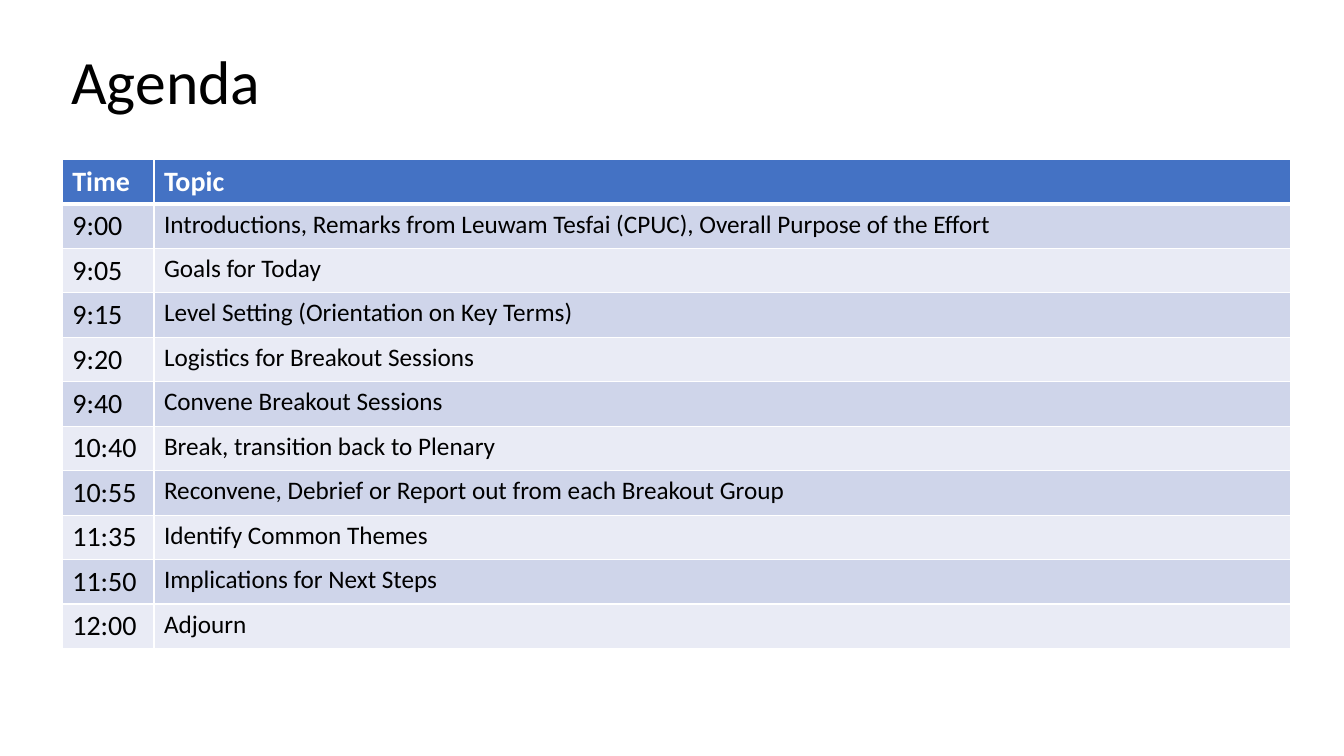
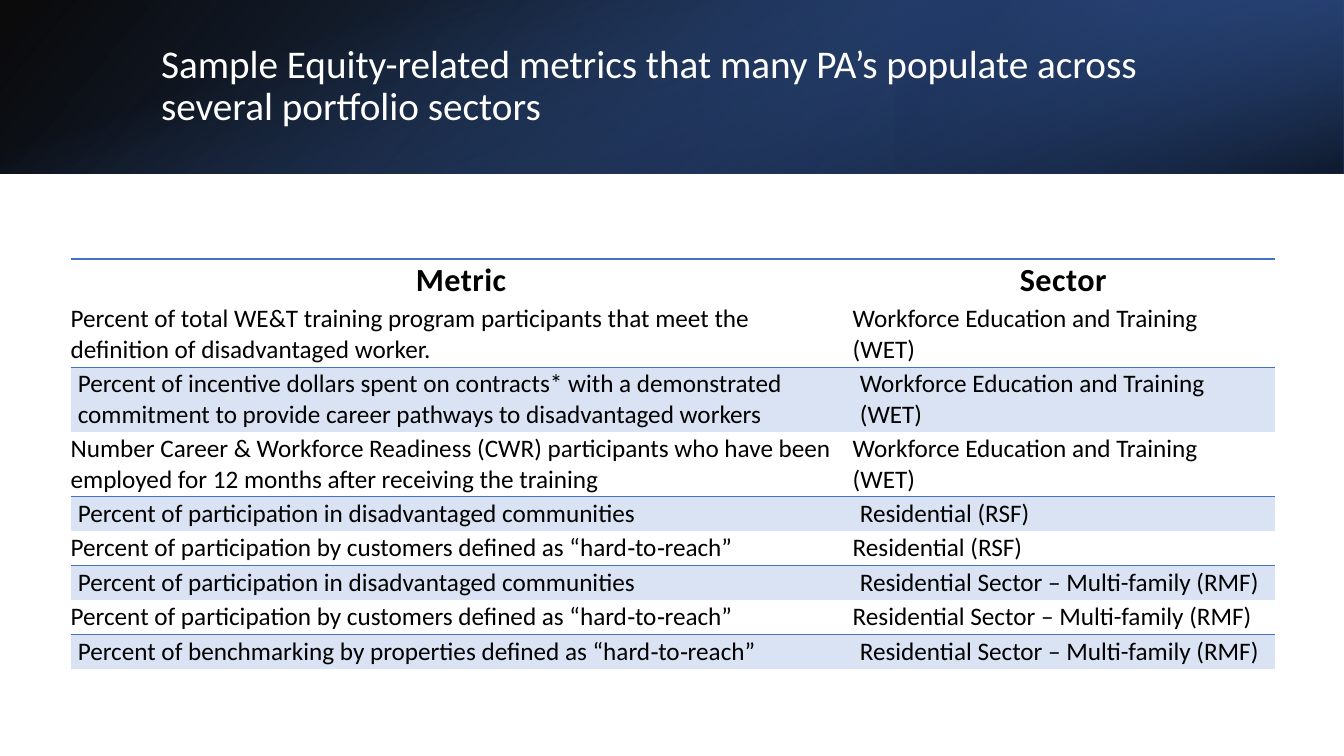
from dataclasses import dataclass

from lxml.etree import SubElement
from pptx import Presentation
from pptx.dml.color import RGBColor
from pptx.enum.shapes import MSO_SHAPE
from pptx.enum.text import MSO_ANCHOR, PP_ALIGN
from pptx.oxml.ns import qn
from pptx.util import Cm, Pt


@dataclass(frozen=True)
class Theme:
    font: str = "Calibri"
    black: str = "000000"
    white: str = "FFFFFF"
    blue: str = "4472C4"
    deep_blue: str = "2F5597"
    navy: str = "203864"
    band_dark: str = "CFD5EA"
    band_light: str = "E9EBF5"
    tint: str = "DAE3F3"
    title: int = 44
    banner_title: int = 28
    metric_header: int = 23
    time: int = 20
    body: int = 18


THEME = Theme()
SLIDE_WIDTH, SLIDE_HEIGHT = 33.87, 19.05
BANNER_HEIGHT = 4.37

AGENDA = [
    ("Time", "Topic"),
    ("9:00", "Introductions, Remarks from Leuwam Tesfai (CPUC), Overall Purpose of the Effort"),
    ("9:05", "Goals for Today"),
    ("9:15", "Level Setting (Orientation on Key Terms)"),
    ("9:20", "Logistics for Breakout Sessions"),
    ("9:40", "Convene Breakout Sessions"),
    ("10:40", "Break, transition back to Plenary"),
    ("10:55", "Reconvene, Debrief or Report out from each Breakout Group"),
    ("11:35", "Identify Common Themes"),
    ("11:50", "Implications for Next Steps"),
    ("12:00", "Adjourn"),
]

WORKFORCE = "Workforce Education and Training (WET)"
RESIDENTIAL = "Residential (RSF)"
MULTI_FAMILY = "Residential Sector – Multi-family (RMF)"
COMMUNITIES = "Percent of participation in disadvantaged communities"
HARD_TO_REACH = "Percent of participation by customers defined as “hard‐to‐reach”"
METRICS = [
    ("Metric", "Sector"),
    ("Percent of total WE&T training program participants that meet the "
     "definition of disadvantaged worker.", WORKFORCE),
    ("Percent of incentive dollars spent on contracts* with a demonstrated "
     "commitment to provide career pathways to disadvantaged workers", WORKFORCE),
    ("Number Career & Workforce Readiness (CWR) participants who have been "
     "employed for 12 months after receiving the training", WORKFORCE),
    (COMMUNITIES, RESIDENTIAL),
    (HARD_TO_REACH, RESIDENTIAL),
    (COMMUNITIES, MULTI_FAMILY),
    (HARD_TO_REACH, MULTI_FAMILY),
    ("Percent of benchmarking by properties defined as “hard‐to‐reach”", MULTI_FAMILY),
]


def set_values(target, values):
    for name, value in values.items():
        setattr(target, name, value)


def write_text(text_frame, text, size, color, bold=False, **paragraph_format):
    """Put one formatted run in the frame and return it."""
    paragraph = text_frame.paragraphs[0]
    set_values(paragraph, paragraph_format)
    run = paragraph.add_run()
    run.text = text
    set_values(run.font, {"name": THEME.font, "size": Pt(size), "bold": bold})
    run.font.color.rgb = RGBColor.from_string(color)
    return run


def add_title(slide, box, text, size, color):
    shape = slide.shapes.add_textbox(*map(Cm, box))
    set_values(shape.text_frame, {"word_wrap": True, "vertical_anchor": MSO_ANCHOR.MIDDLE})
    write_text(shape.text_frame, text, size, color, line_spacing=0.9)


def set_borders(cell, borders):
    """Draw the sides named in borders as (colour, points); clear the others."""
    properties = cell._tc.get_or_add_tcPr()
    for side in "LRTB":
        line = SubElement(properties, qn(f"a:ln{side}"))
        if side in borders:
            color, width = borders[side]
            line.set("w", str(Pt(width)))
            fill = SubElement(line, qn("a:solidFill"))
            SubElement(fill, qn("a:srgbClr")).set("val", color)
        else:
            line.set("w", "0")
            SubElement(line, qn("a:noFill"))


def fill_cell(cell, color):
    if color is None:
        cell.fill.background()
    else:
        cell.fill.solid()
        cell.fill.fore_color.rgb = RGBColor.from_string(color)


def add_grid(slide, left, top, widths, heights, rows, format_cell):
    """Add a table and let format_cell(cell, row, column, text) write each cell."""
    box = (left, top, sum(widths), sum(heights))
    table = slide.shapes.add_table(len(rows), len(widths), *map(Cm, box)).table
    set_values(table, {"first_row": False, "horz_banding": False})
    for column, width in zip(table.columns, widths):
        column.width = Cm(width)
    for table_row, height in zip(table.rows, heights):
        table_row.height = Cm(height)
    for row, texts in enumerate(rows):
        for column, text in enumerate(texts):
            format_cell(table.cell(row, column), row, column, text)


def format_agenda_cell(cell, row, column, text):
    header = row == 0
    borders = dict.fromkeys("LRTB", (THEME.white, 1))
    if row < 2:
        borders["B" if header else "T"] = (THEME.white, 3)
    set_borders(cell, borders)
    band = THEME.band_dark if row % 2 else THEME.band_light
    fill_cell(cell, THEME.blue if header else band)
    size = THEME.time if header or column == 0 else THEME.body
    write_text(cell.text_frame, text, size, THEME.white if header else THEME.black, header)


def format_metric_cell(cell, row, column, text):
    header = row == 0
    tinted = not header and row % 2 == 0
    borders = {}
    if header:
        borders["T"] = (THEME.blue, 1.5)
    else:
        borders["T" if tinted else "B"] = (THEME.blue, 0.75)
    set_borders(cell, borders)
    fill_cell(cell, THEME.tint if tinted else None)
    set_values(cell, {
        "margin_left": Cm(0.18 if tinted else 0),
        "margin_right": Cm(0.03 if header else 0.28),
        "margin_top": 0,
        "margin_bottom": 0,
        "vertical_anchor": MSO_ANCHOR.MIDDLE,
    })
    run = write_text(cell.text_frame, text,
                     THEME.metric_header if header else THEME.body, THEME.black, header,
                     alignment=PP_ALIGN.CENTER if header else PP_ALIGN.LEFT)
    if header:
        run.font._element.set("spc", "30")


def add_gradient(slide, box, stops, angle, rotation=0, flip=False):
    """Add a rectangle; stops are (position, colour, opacity %), angle is clockwise."""
    shape = slide.shapes.add_shape(MSO_SHAPE.RECTANGLE, *map(Cm, box))
    shape.shadow.inherit = False
    shape.line.fill.background()
    shape.rotation = rotation
    if flip:
        shape._element.spPr.find(qn("a:xfrm")).set("flipH", "1")
    shape.fill.gradient()
    shape.fill.gradient_angle = 360 - angle
    for stop, (position, color, _) in zip(shape.fill.gradient_stops, stops):
        stop.position = position
        stop.color.rgb = RGBColor.from_string(color)
    colors = shape._element.spPr.find(qn("a:gradFill")).iter(qn("a:srgbClr"))
    for element, (_, _, opacity) in zip(list(colors), stops):
        SubElement(element, qn("a:alpha")).set("val", str(opacity * 1000))


def add_banner(slide, left, top, width, height):
    """Layer three gradients: base, glow on the right third, dark lower edge."""
    third = width / 3
    offset = (width - height) / 2
    add_gradient(slide, (left, top, width, height),
                 [(0, THEME.black, 96), (1, THEME.deep_blue, 100)], 140, flip=True)
    add_gradient(slide, (left + width - third, top, third, height),
                 [(0.19, THEME.navy, 68), (1, THEME.blue, 79)], 320, 180, True)
    add_gradient(slide, (left + offset, top - offset, height, width),
                 [(0.23, THEME.blue, 0), (0.99, THEME.black, 74)], 340, 90)


def build_agenda(slide):
    add_title(slide, (1.55, 0.69, 29.21, 2.87), "Agenda", THEME.title, THEME.black)
    add_grid(slide, 1.57, 4.02, [2.31, 28.65], [1.12] * len(AGENDA), AGENDA,
             format_agenda_cell)


def build_metrics(slide):
    add_banner(slide, 0, 0, SLIDE_WIDTH, BANNER_HEIGHT)
    add_title(slide, (3.81, 0.97, 27.89, 2.44),
              "Sample Equity-related metrics that many PA’s populate across "
              "several portfolio sectors", THEME.banner_title, THEME.white)
    heights = [1.09] + [1.63] * 3 + [0.87] * 5
    add_grid(slide, 1.78, 6.53, [19.71, 10.64], heights, METRICS, format_metric_cell)


def main():
    presentation = Presentation()
    set_values(presentation, {"slide_width": Cm(SLIDE_WIDTH), "slide_height": Cm(SLIDE_HEIGHT)})
    blank = presentation.slide_layouts[6]
    for build in (build_agenda, build_metrics):
        build(presentation.slides.add_slide(blank))
    presentation.save("out.pptx")


if __name__ == "__main__":
    main()
